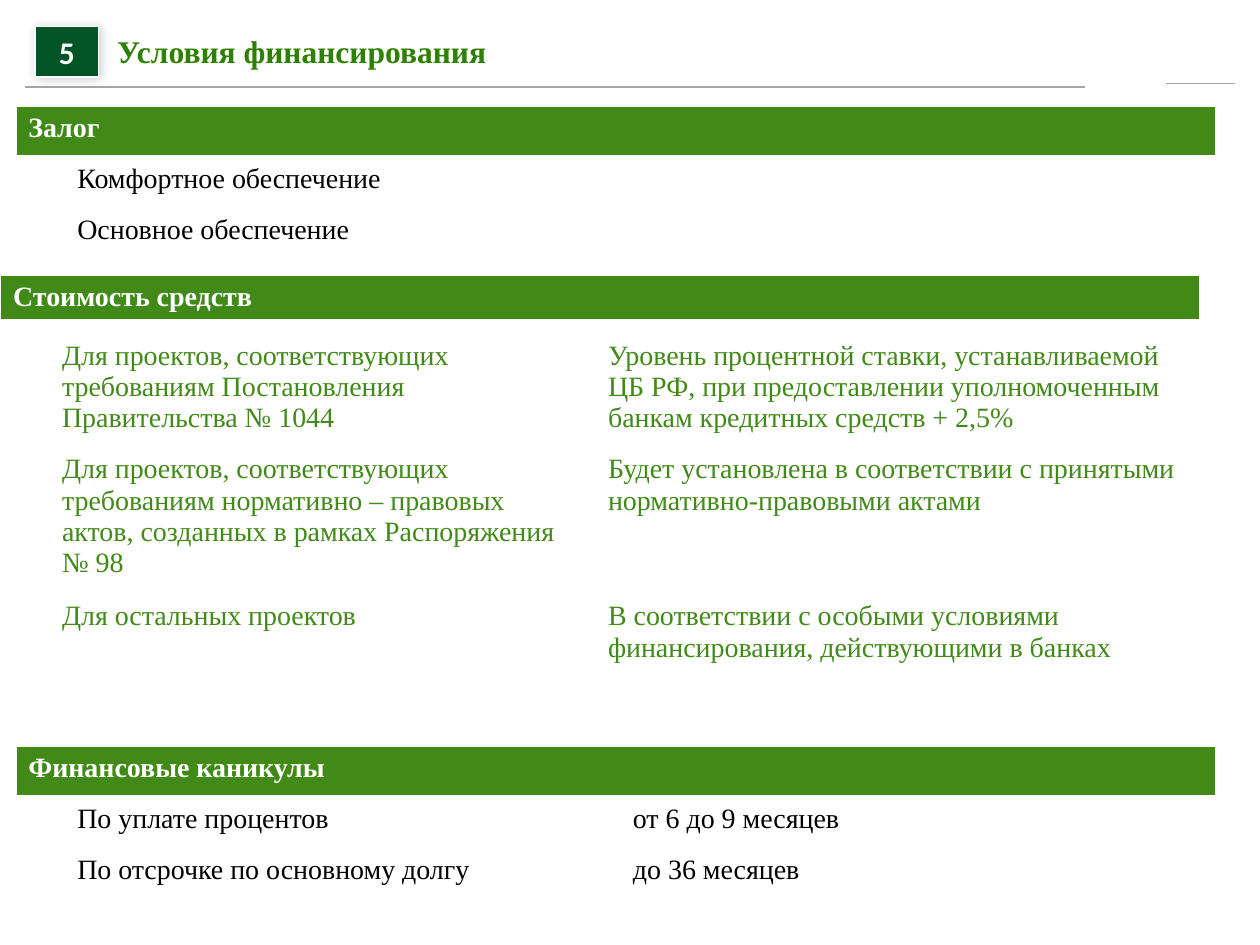
from dataclasses import dataclass

from lxml.etree import SubElement
from pptx import Presentation
from pptx.dml.color import RGBColor
from pptx.enum.shapes import MSO_CONNECTOR, MSO_SHAPE
from pptx.enum.text import MSO_ANCHOR, PP_ALIGN
from pptx.oxml import parse_xml
from pptx.oxml.ns import nsdecls, qn
from pptx.util import Pt


@dataclass(frozen=True)
class Theme:
    """Colours, fonts and type sizes of the slide."""
    band: str = "418A18"
    title: str = "2E8000"
    badge: str = "005426"
    rule: str = "A6A6A6"
    white: str = "FFFFFF"
    black: str = "000000"
    text_font: str = "Times New Roman"
    badge_font: str = "Calibri"
    heading_size: float = 18
    table_size: float = 16


THEME = Theme()
COLUMNS = (28, 312, 345.5)


def style_paragraph(paragraph, color, size, bold=False, name=THEME.text_font):
    """Set the font of a whole paragraph."""
    font = paragraph.font
    font.name, font.size, font.bold = name, Pt(size), bold
    font.color.rgb = RGBColor.from_string(color)


def add_rule(slide, left, right, top):
    """Draw a thin horizontal rule."""
    rule = slide.shapes.add_connector(MSO_CONNECTOR.STRAIGHT, Pt(left), Pt(top), Pt(right), Pt(top))
    rule.line.color.rgb = RGBColor.from_string(THEME.rule)
    rule.line.width = Pt(1)
    SubElement(rule._element.spPr, qn("a:effectLst"))


def add_title(slide, text):
    """Write the slide title, indented past the number badge."""
    box = slide.shapes.add_textbox(Pt(13), Pt(8), Pt(598), Pt(42))
    frame = box.text_frame
    frame.word_wrap = True
    frame.vertical_anchor = MSO_ANCHOR.MIDDLE
    frame.margin_left = Pt(54)
    frame.margin_top = frame.margin_right = frame.margin_bottom = 0
    frame.text = text
    style_paragraph(frame.paragraphs[0], THEME.title, THEME.heading_size, True)


def add_badge(slide, number):
    """Draw the number badge with its soft shadow."""
    badge = slide.shapes.add_shape(MSO_SHAPE.RECTANGLE, Pt(20), Pt(15), Pt(36.5), Pt(29))
    badge.fill.solid()
    badge.fill.fore_color.rgb = RGBColor.from_string(THEME.badge)
    badge.line.color.rgb = RGBColor.from_string(THEME.white)
    badge.line.width = Pt(0.75)
    badge._element.spPr.append(parse_xml(
        f'<a:effectLst {nsdecls("a")}><a:outerShdw blurRad="{Pt(6)}" dist="{Pt(1)}" dir="2700000">'
        f'<a:srgbClr val="{THEME.black}"><a:alpha val="20000"/></a:srgbClr>'
        '</a:outerShdw></a:effectLst>'))
    badge.text_frame.text = number
    paragraph = badge.text_frame.paragraphs[0]
    paragraph.alignment = PP_ALIGN.CENTER
    style_paragraph(paragraph, THEME.white, THEME.heading_size, True, THEME.badge_font)


def set_borders(cell, bottom_width, top_width):
    """Give a cell white borders on all sides."""
    widths = {"lnL": 1, "lnR": 1, "lnT": top_width, "lnB": bottom_width}
    for position, (side, width) in enumerate(widths.items()):
        cell._tc.get_or_add_tcPr().insert(position, parse_xml(
            f'<a:{side} {nsdecls("a")} w="{Pt(width)}"><a:solidFill>'
            f'<a:srgbClr val="{THEME.white}"/></a:solidFill></a:{side}>'))


def add_section(slide, left, top, heights, rows, columns=COLUMNS, heading=None, color=THEME.black):
    """Add a table whose optional heading band spans all columns."""
    shape = slide.shapes.add_table(len(heights), len(columns), Pt(left), Pt(top),
                                   Pt(sum(columns)), Pt(sum(heights)))
    table = shape.table
    table.horz_banding = False
    table.first_row = heading is not None
    for column, width in zip(table.columns, columns):
        column.width = Pt(width)
    for row, height in zip(table.rows, heights):
        row.height = Pt(height)
    contents = ([(heading, "")] if heading else []) + rows
    for row_index, (row, texts) in enumerate(zip(table.rows, contents)):
        is_heading = heading is not None and row_index == 0
        cell_texts = (*texts, "") if is_heading else ("", *texts)
        for cell, text in zip(row.cells, cell_texts):
            cell.fill.background()
            if is_heading:
                cell.fill.solid()
                cell.fill.fore_color.rgb = RGBColor.from_string(THEME.band)
            set_borders(cell, 3 if row_index == 0 else 1, 3 if row_index == 1 else 1)
            if text:
                cell.text = text
                style_paragraph(cell.text_frame.paragraphs[0],
                                THEME.white if is_heading else color, THEME.table_size, is_heading)
    if heading:
        table.cell(0, 0).merge(table.cell(0, len(columns) - 1))


def main():
    """Build and save the slide."""
    presentation = Presentation()
    presentation.slide_width, presentation.slide_height = Pt(720), Pt(540)
    slide = presentation.slides.add_slide(presentation.slide_layouts[6])

    add_rule(slide, 14.4, 620, 49.7)
    add_rule(slide, 666.5, 705.5, 47.7)
    add_title(slide, "Условия финансирования")
    add_section(slide, 9, 60.5, [29.2] * 3,
                [("Комфортное обеспечение", ""), ("Основное обеспечение", "")], heading="Залог")
    add_section(slide, 0.3, 157, [26, 26.6, 26.6], [("", ""), ("", "")], heading="Стоимость средств")
    add_section(slide, 9, 426.5, [29.2] * 3,
                [("По уплате процентов", "от 6 до 9 месяцев"),
                 ("По отсрочке по основному долгу", "до 36 месяцев")],
                columns=(28, 317.5, 340), heading="Финансовые каникулы")
    add_badge(slide, "5")
    add_section(slide, 0.3, 190.8, [65, 84, 76.3],
                [("Для проектов, соответствующих требованиям Постановления Правительства № 1044",
                  "Уровень процентной ставки, устанавливаемой ЦБ РФ, при предоставлении "
                  "уполномоченным банкам кредитных средств + 2,5%"),
                 ("Для проектов, соответствующих требованиям нормативно – правовых актов, "
                  "созданных в рамках Распоряжения № 98",
                  "Будет установлена в соответствии с принятыми нормативно-правовыми актами"),
                 ("Для остальных проектов",
                  "В соответствии с особыми условиями финансирования, действующими в банках")],
                color=THEME.band)
    presentation.save("out.pptx")


if __name__ == "__main__":
    main()
